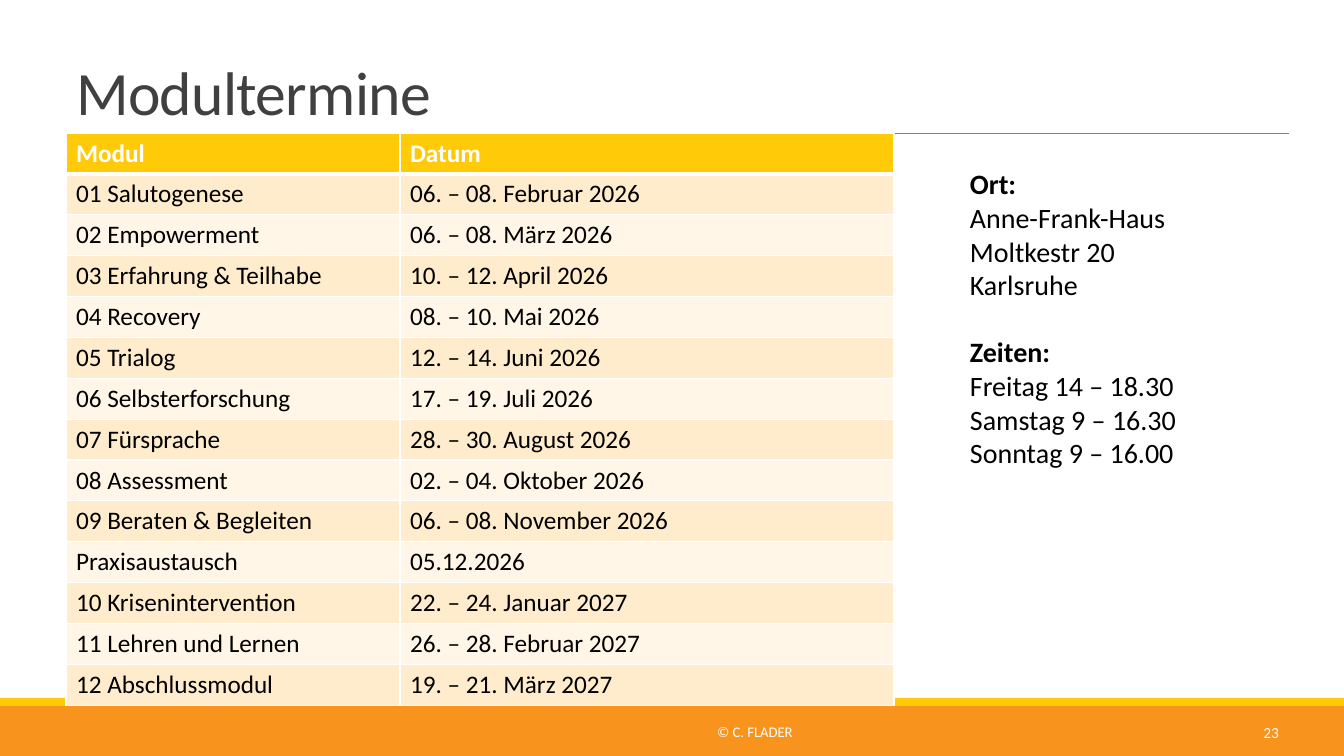
"""Build the "Modultermine" slide: module dates, venue and times."""
from lxml import etree
from pptx import Presentation
from pptx.dml.color import RGBColor
from pptx.enum.shapes import MSO_CONNECTOR, MSO_SHAPE
from pptx.enum.text import MSO_ANCHOR, MSO_AUTO_SIZE, PP_ALIGN
from pptx.oxml import parse_xml
from pptx.oxml.ns import nsdecls, qn
from pptx.util import Pt

RECTANGLE = MSO_SHAPE.RECTANGLE
STRAIGHT = MSO_CONNECTOR.STRAIGHT
LEFT, CENTER, RIGHT = PP_ALIGN.LEFT, PP_ALIGN.CENTER, PP_ALIGN.RIGHT
TOP, MIDDLE, BOTTOM = MSO_ANCHOR.TOP, MSO_ANCHOR.MIDDLE, MSO_ANCHOR.BOTTOM
NO_AUTOFIT = MSO_AUTO_SIZE.NONE

ORANGE = RGBColor(0xF8, 0x93, 0x1D)
YELLOW = RGBColor(0xFF, 0xCA, 0x08)
BAND_DARK = RGBColor(0xFF, 0xEC, 0xCC)
BAND_LIGHT = RGBColor(0xFF, 0xF6, 0xE7)
GRAY = RGBColor(0x80, 0x80, 0x80)
TITLE_GRAY = RGBColor(0x40, 0x40, 0x40)
WHITE = RGBColor(0xFF, 0xFF, 0xFF)
BLACK = RGBColor(0, 0, 0)
FONT = "Calibri"

SLIDE_WIDTH, SLIDE_HEIGHT = 1344, 756
EMU_PER_PX = 12192000 / SLIDE_WIDTH


def px(*lengths):
    """Turn pixel lengths into EMU."""
    return [round(length * EMU_PER_PX) for length in lengths]


def style(paragraph, size, color, bold=False, align=LEFT):
    """Set font and alignment of a paragraph."""
    paragraph.alignment = align
    paragraph.font.name = FONT
    paragraph.font.size = Pt(size)
    paragraph.font.bold = bold
    paragraph.font.color.rgb = color


prs = Presentation()
prs.slide_width, prs.slide_height = px(SLIDE_WIDTH, SLIDE_HEIGHT)
slide = prs.slides.add_slide(prs.slide_layouts[5])
shapes = slide.shapes

for top, height, color in [(706, 50, ORANGE), (698, 8, YELLOW)]:
    footer_band = shapes.add_shape(RECTANGLE, *px(0, top, SLIDE_WIDTH, height))
    footer_band.shadow.inherit = False
    footer_band.fill.solid()
    footer_band.fill.fore_color.rgb = color
    footer_band.line.fill.background()

title_rule = shapes.add_connector(STRAIGHT, *px(66, 133, 1289, 133))
title_rule.line.color.rgb = GRAY
title_rule.line.width = Pt(0.5)
etree.SubElement(title_rule._element.spPr, qn("a:effectLst"))

title = shapes.title
title.left, title.top, title.width, title.height = px(66, 24, 1223, 109)
title.text_frame.text = "Modultermine"
title.text_frame.auto_size = NO_AUTOFIT
title.text_frame.vertical_anchor = BOTTOM
heading = title.text_frame.paragraphs[0]
style(heading, 44, TITLE_GRAY)
heading.line_spacing = 0.85
heading.runs[0].font._element.set("spc", "-50")

modules = [
    ("Modul", "Datum"),
    ("01 Salutogenese", "06. – 08. Februar 2026"),
    ("02 Empowerment", "06. – 08. März 2026"),
    ("03 Erfahrung & Teilhabe", "10. – 12. April 2026"),
    ("04 Recovery", "08. – 10. Mai 2026"),
    ("05 Trialog", "12. – 14. Juni 2026"),
    ("06 Selbsterforschung", "17. – 19. Juli 2026"),
    ("07 Fürsprache", "28. – 30. August 2026"),
    ("08 Assessment", "02. – 04. Oktober 2026"),
    ("09 Beraten & Begleiten", "06. – 08. November 2026"),
    ("Praxisaustausch", "05.12.2026"),
    ("10 Krisenintervention", "22. – 24. Januar 2027"),
    ("11 Lehren und Lernen", "26. – 28. Februar 2027"),
    ("12 Abschlussmodul", "19. – 21. März 2027"),
]
ROW_HEIGHT = 39
schedule = shapes.add_table(
    len(modules), 2, *px(66, 133, 828, ROW_HEIGHT * len(modules))
).table
schedule.columns[0].width, schedule.columns[1].width = px(334, 494)

for row, entries in enumerate(modules):
    is_header = row == 0
    band = YELLOW if is_header else BAND_DARK if row % 2 else BAND_LIGHT
    border_widths = {"L": 1, "R": 1, "T": 3 if row == 1 else 1, "B": 3 if is_header else 1}
    for column, entry in enumerate(entries):
        cell = schedule.cell(row, column)
        cell.text = entry
        style(cell.text_frame.paragraphs[0], 18, WHITE if is_header else BLACK, is_header)
        cell_properties = cell._tc.get_or_add_tcPr()
        for side, width in border_widths.items():
            cell_properties.append(parse_xml(
                f'<a:ln{side} {nsdecls("a")} w="{Pt(width)}"><a:solidFill>'
                f'<a:srgbClr val="{WHITE}"/></a:solidFill></a:ln{side}>'
            ))
        cell.fill.solid()
        cell.fill.fore_color.rgb = band

venue_and_times = [
    "Ort:", "Anne-Frank-Haus", "Moltkestr 20", "Karlsruhe",
    "Zeiten:", "Freitag 14 – 18.30", "Samstag 9 – 16.30", "Sonntag 9 – 16.00",
]
text_blocks = [
    ((354, 712, 802, 40), ["© C. FLADER"], 10.5, WHITE, CENTER, MIDDLE),
    ((1155, 712, 134, 40), ["23"], 11, WHITE, RIGHT, MIDDLE),
    ((960, 162, 330, 315), venue_and_times, 20, BLACK, LEFT, TOP),
]
for box, lines, size, color, align, anchor in text_blocks:
    frame = shapes.add_textbox(*px(*box)).text_frame
    frame.word_wrap = True
    frame.vertical_anchor = anchor
    frame.text = "\n".join(lines)
    for paragraph in frame.paragraphs:
        style(paragraph, size, color, paragraph.text.endswith(":"), align)
        if paragraph.text == "Zeiten:":
            paragraph.space_before = Pt(24)

prs.save("out.pptx")
